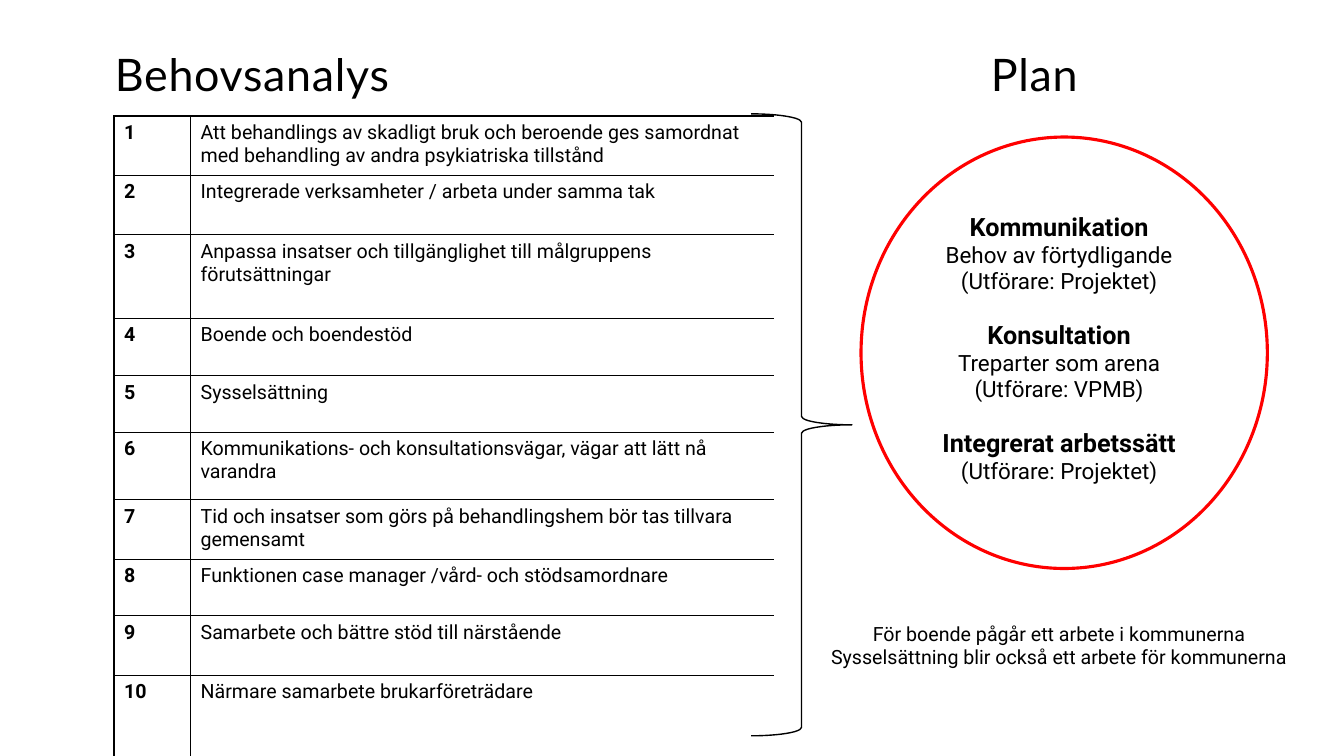
from lxml import etree
from pptx import Presentation
from pptx.dml.color import RGBColor
from pptx.enum.shapes import MSO_SHAPE
from pptx.enum.text import MSO_ANCHOR, PP_ALIGN
from pptx.oxml import parse_xml
from pptx.oxml.ns import nsdecls, qn
from pptx.util import Inches, Pt

BLACK = RGBColor(0, 0, 0)
RED = RGBColor(255, 0, 0)
BRACE, OVAL = MSO_SHAPE.RIGHT_BRACE, MSO_SHAPE.OVAL
MIDDLE, CENTER = MSO_ANCHOR.MIDDLE, PP_ALIGN.CENTER


def write(par, text, size, bold=False, face="Roboto"):
    run = par.add_run()
    run.text = text
    run.font.size = Pt(size)
    run.font.bold = bold
    run.font.name = face
    run.font.color.rgb = BLACK
    return run


def border(cell, sides):
    props = cell._tc.get_or_add_tcPr()
    for spot, side in enumerate("LRTB"):
        fill = "<a:noFill/>"
        if side in sides:
            fill = f'<a:solidFill><a:srgbClr val="{BLACK}"/></a:solidFill>'
        line = f'<a:ln{side} {nsdecls("a")} w="12700">{fill}</a:ln{side}>'
        props.insert(spot, parse_xml(line))


prs = Presentation()
prs.slide_width, prs.slide_height = Inches(13.33), Inches(7.5)
slide = prs.slides.add_slide(prs.slide_layouts[6])
shapes = slide.shapes

needs = [
    ("Att behandlings av skadligt bruk och beroende ges samordnat "
     "med behandling av andra psykiatriska tillstånd", 0.59),
    ("Integrerade verksamheter / arbeta under samma tak", 0.59),
    ("Anpassa insatser och tillgänglighet till målgruppens förutsättningar", 0.83),
    ("Boende och boendestöd", 0.57),
    ("Sysselsättning", 0.56),
    ("Kommunikations- och konsultationsvägar, vägar att lätt nå varandra", 0.67),
    ("Tid och insatser som görs på behandlingshem bör tas tillvara gemensamt", 0.59),
    ("Funktionen case manager /vård- och stödsamordnare", 0.56),
    ("Samarbete och bättre stöd till närstående", 0.59),
    ("Närmare samarbete brukarföreträdare", 0.8),
]
table = shapes.add_table(len(needs), 3, Inches(1.13), Inches(1.15),
                         Inches(12.2), Inches(6.35)).table
table.first_row = table.horz_banding = False
for col, width in zip(table.columns, (0.76, 5.79, 5.65)):
    col.width = Inches(width)

for i, (need, height) in enumerate(needs):
    row = table.rows[i]
    row.height = Inches(height)
    write(row.cells[0].text_frame.paragraphs[0], str(i + 1), 14, True)
    write(row.cells[1].text_frame.paragraphs[0], need, 14)
    sides = "LTB" if i < len(needs) - 1 else "LT"
    for cell, edge in zip(row.cells, (sides + "R", sides, "")):
        cell.fill.background()
        border(cell, edge)

plan = table.cell(0, 2)
plan.merge(table.cell(len(needs) - 1, 2))
plan.margin_top = Inches(0.97)
lines = [
    ("Kommunikation", 18, 0),
    ("Behov av förtydligande", 16, 0),
    ("(Utförare: Projektet)", 16, 0),
    ("Konsultation", 18, 18.75),
    ("Treparter som arena", 16, 0),
    ("(Utförare: VPMB)", 16, 0),
    ("Integrerat arbetssätt", 18, 18.75),
    ("(Utförare: Projektet)", 16, 0),
    ("För boende pågår ett arbete i kommunerna", 14, 98.5),
    ("Sysselsättning blir också ett arbete för kommunerna", 14, 0),
]
frame = plan.text_frame
for i, (text, size, gap) in enumerate(lines):
    par = frame.add_paragraph() if i else frame.paragraphs[0]
    par.alignment = CENTER
    par.space_before = Pt(gap)
    write(par, text, size, size == 18)

title = shapes.add_textbox(Inches(1.04), Inches(0.37), Inches(10.81), Inches(0.78))
frame = title.text_frame
frame.word_wrap = True
frame.vertical_anchor = MIDDLE
par = frame.paragraphs[0]
tabs = etree.SubElement(par._p.get_or_add_pPr(), qn("a:tabLst"))
etree.SubElement(tabs, qn("a:tab"), pos=str(Inches(8.69)), algn="l")
par.line_spacing = 0.9
for text in ("Behovsanalys\t", "Plan"):
    run = write(par, text, 32, face="Lato")
    run.font._element.set("spc", "50")

marks = [
    (BRACE, 7.45, 1.13, 1, 6.17, BLACK, 1),
    (OVAL, 8.54, 1.36, 4.03, 4.28, RED, 2.25),
]
for kind, left, top, width, height, color, weight in marks:
    mark = shapes.add_shape(kind, Inches(left), Inches(top),
                            Inches(width), Inches(height))
    mark.shadow.inherit = False
    mark.fill.background()
    mark.line.color.rgb = color
    mark.line.width = Pt(weight)

prs.save("out.pptx")
